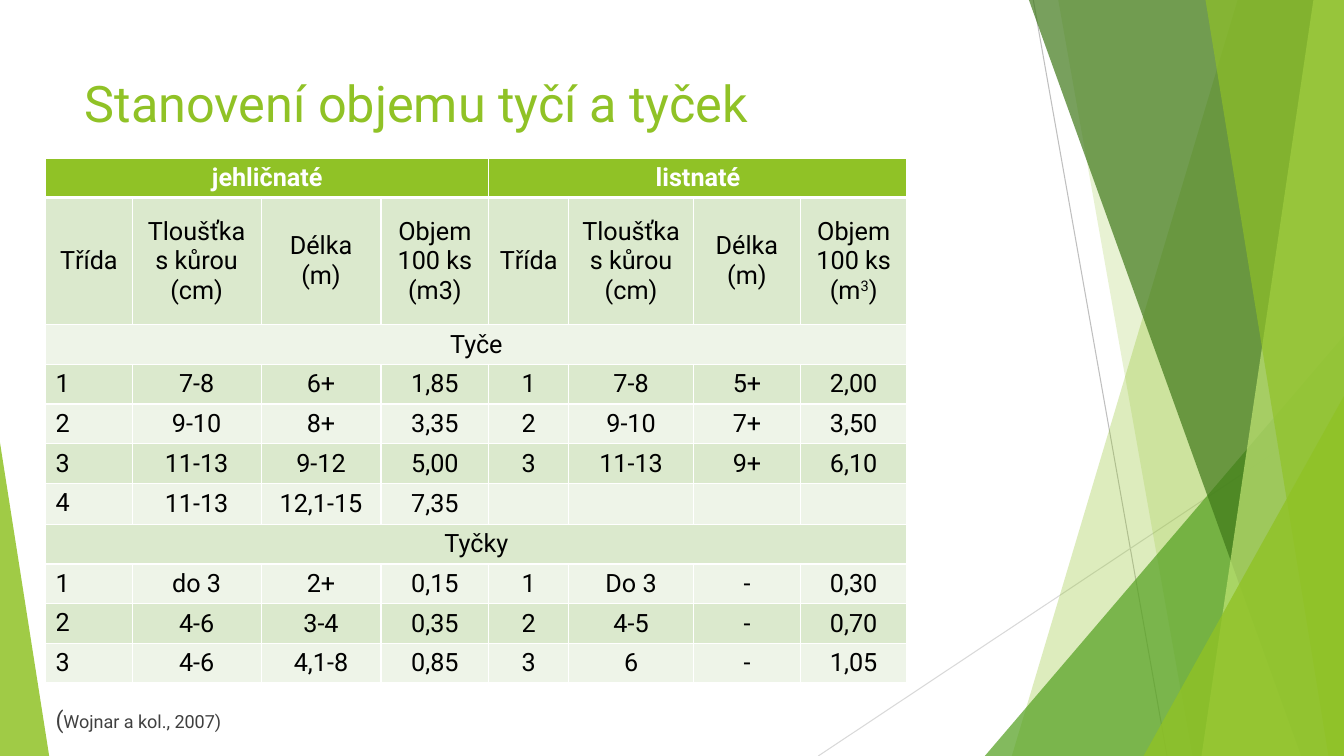
from dataclasses import dataclass

from lxml import etree
from pptx import Presentation
from pptx import util as u
from pptx.dml.color import RGBColor
from pptx.enum import shapes, text
from pptx.oxml import ns

FONT = "Roboto"
WIDTH, HEIGHT = 33.87, 19.05
COLORS = {
    "green": "90C226", "leaf": "54A021", "forest": "3F7819", "lime": "C0E474",
    "steep_line": "BFBFBF", "flat_line": "D9D9D9", "white": "FFFFFF",
    "black": "000000", "gray": "404040", "band_dark": "DBE9CD", "band_light": "EEF4E8",
}


@dataclass
class Ray:
    start: tuple[float, float]
    end: tuple[float, float]
    color: str


@dataclass
class Panel:
    """Band that reaches from a slanted left edge to the right slide edge."""
    top_x: float
    bottom_x: float
    color: str
    opacity: int


@dataclass
class Wedge:
    """Right triangle standing on the bottom slide edge."""
    left: float
    width: float
    height: float
    apex: float
    color: str
    opacity: int


DECORATION = [
    Ray((26.04, 0), (29.41, HEIGHT), "steep_line"),
    Ray((WIDTH, 10.24), (20.62, HEIGHT), "flat_line"),
    Panel(31.19, 25.5, "green", 30),
    Panel(26.67, 30.05, "green", 20),
    Wedge(24.82, 9.05, 10.59, 1, "leaf", 72),
    Panel(25.93, 32.79, "forest", 70),
    Panel(33.1, 30.28, "lime", 70),
    Panel(30.38, 33.48, "green", 65),
    Wedge(28.82, 5.05, 9.07, 1, "green", 80),
    Wedge(0, 1.24, 7.9, 0, "green", 85),
]

# Each row is spread evenly over the eight columns
COLUMN_WIDTHS = [2.18, 3.25, 3.02, 2.72, 2.01, 3.15, 2.69, 2.69]
ROWS = [
    ("jehličnaté", "listnaté"),
    ("Třída", "Tloušťka s kůrou (cm)", "Délka (m)", "Objem 100 ks (m3)",
     "Třída", "Tloušťka s kůrou (cm)", "Délka (m)", ("Objem 100 ks (m", "3", ")")),
    ("Tyče",),
    ("1", "7-8", "6+", "1,85", "1", "7-8", "5+", "2,00"),
    ("2", "9-10", "8+", "3,35", "2", "9-10", "7+", "3,50"),
    ("3", "11-13", "9-12", "5,00", "3", "11-13", "9+", "6,10"),
    ("4", "11-13", "12,1-15", "7,35", "", "", "", ""),
    ("Tyčky",),
    ("1", "do 3", "2+", "0,15", "1", "Do 3", "-", "0,30"),
    ("2", "4-6", "3-4", "0,35", "2", "4-5", "-", "0,70"),
    ("3", "4-6", "4,1-8", "0,85", "3", "6", "-", "1,05"),
]
ROW_HEIGHT, LABEL_ROW_HEIGHT = 1.0, 3.2


def rgb(name: str) -> RGBColor:
    return RGBColor.from_string(COLORS[name])


def format_run(run, size: float, color: str, bold: bool = False) -> None:
    run.font.name = FONT
    run.font.size = u.Pt(size)
    run.font.bold = bold
    run.font.color.rgb = rgb(color)


def paint(shape, color: str, opacity: int) -> None:
    shape.shadow.inherit = False
    shape.line.fill.background()
    shape.fill.solid()
    shape.fill.fore_color.rgb = rgb(color)
    fill_color = shape.fill._xPr.find(".//" + ns.qn("a:srgbClr"))
    etree.SubElement(fill_color, ns.qn("a:alpha"), val=str(opacity * 1000))


def draw_ray(slide, ray: Ray) -> None:
    connector = slide.shapes.add_connector(
        shapes.MSO_CONNECTOR.STRAIGHT, *(u.Cm(v) for v in ray.start + ray.end))
    connector.line.color.rgb = rgb(ray.color)
    connector.line.width = u.Pt(0.75)
    etree.SubElement(connector._element.spPr, ns.qn("a:effectLst"))


def draw_panel(slide, panel: Panel) -> None:
    builder = slide.shapes.build_freeform(u.Cm(panel.top_x), 0)
    corners = [(WIDTH, 0), (WIDTH, HEIGHT), (panel.bottom_x, HEIGHT)]
    builder.add_line_segments([(u.Cm(x), u.Cm(y)) for x, y in corners])
    paint(builder.convert_to_shape(), panel.color, panel.opacity)


def draw_wedge(slide, wedge: Wedge) -> None:
    triangle = slide.shapes.add_shape(
        shapes.MSO_SHAPE.ISOSCELES_TRIANGLE, u.Cm(wedge.left),
        u.Cm(HEIGHT - wedge.height), u.Cm(wedge.width), u.Cm(wedge.height))
    triangle.adjustments[0] = wedge.apex
    paint(triangle, wedge.color, wedge.opacity)


def style_cell(cell, fill: str, top: float, bottom: float) -> None:
    properties = cell._tc.get_or_add_tcPr()
    for side, points in (("L", 1), ("R", 1), ("T", top), ("B", bottom)):
        border = etree.SubElement(properties, ns.qn(f"a:ln{side}"), w=str(u.Pt(points)))
        solid = etree.SubElement(border, ns.qn("a:solidFill"))
        etree.SubElement(solid, ns.qn("a:srgbClr"), val=COLORS["white"])
    cell.fill.solid()
    cell.fill.fore_color.rgb = rgb(fill)


def write_cell(cell, content: str | tuple[str, ...], header: bool, centered: bool) -> None:
    paragraph = cell.text_frame.paragraphs[0]
    if isinstance(content, tuple):
        for piece in content:
            paragraph.add_run().text = piece
        paragraph.runs[1].font._element.set("baseline", "30000")
    else:
        paragraph.text = content
    for run in paragraph.runs:
        format_run(run, 18, "white" if header else "black", header)
    if centered:
        paragraph.alignment = text.PP_ALIGN.CENTER
        cell.vertical_anchor = text.MSO_ANCHOR.MIDDLE


def draw_table(slide) -> None:
    count = len(COLUMN_WIDTHS)
    height = ROW_HEIGHT * (len(ROWS) - 1) + LABEL_ROW_HEIGHT
    table = slide.shapes.add_table(
        len(ROWS), count, u.Cm(1.15), u.Cm(3.98),
        u.Cm(sum(COLUMN_WIDTHS)), u.Cm(height)).table
    for column, width in zip(table.columns, COLUMN_WIDTHS):
        column.width = u.Cm(width)
    for row, contents in enumerate(ROWS):
        table.rows[row].height = u.Cm(LABEL_ROW_HEIGHT if row == 1 else ROW_HEIGHT)
        band = "green" if row == 0 else "band_dark" if row % 2 else "band_light"
        for cell in table.rows[row].cells:
            style_cell(cell, band, 3 if row == 1 else 1, 3 if row == 0 else 1)
        span = count // len(contents)
        for index, content in enumerate(contents):
            column = index * span
            cell = table.cell(row, column)
            if span > 1:
                cell.merge(table.cell(row, column + span - 1))
            class_number = span == 1 and column == 0 and row > 1
            write_cell(cell, content, row == 0, not class_number)


def write_title(slide) -> None:
    title = slide.shapes.title
    title.left, title.top, title.width, title.height = map(u.Cm, (1.88, 1.7, 23.88, 3.66))
    frame = title.text_frame
    frame.text = "Stanovení objemu tyčí a tyček"
    frame.word_wrap = True
    frame.vertical_anchor = text.MSO_ANCHOR.TOP
    frame.paragraphs[0].alignment = text.PP_ALIGN.LEFT
    format_run(frame.paragraphs[0].runs[0], 36, "green")


def write_citation(slide) -> None:
    box = slide.shapes.add_textbox(*map(u.Cm, (1.15, 17.65, 15.8, 0.94)))
    box.text_frame.word_wrap = True
    paragraph = box.text_frame.paragraphs[0]
    paragraph.space_before = u.Pt(10)
    for words, size in (("(", 16.6), ("Wojnar a kol., 2007)", 12.9)):
        run = paragraph.add_run()
        run.text = words
        format_run(run, size, "gray")


def main() -> None:
    presentation = Presentation()
    presentation.slide_width, presentation.slide_height = u.Cm(WIDTH), u.Cm(HEIGHT)
    slide = presentation.slides.add_slide(presentation.slide_layouts[5])
    # Background decoration, back to front
    draw = {Ray: draw_ray, Panel: draw_panel, Wedge: draw_wedge}
    for part in DECORATION:
        draw[type(part)](slide, part)
    # Content
    write_title(slide)
    draw_table(slide)
    write_citation(slide)
    presentation.save("out.pptx")


if __name__ == "__main__":
    main()
